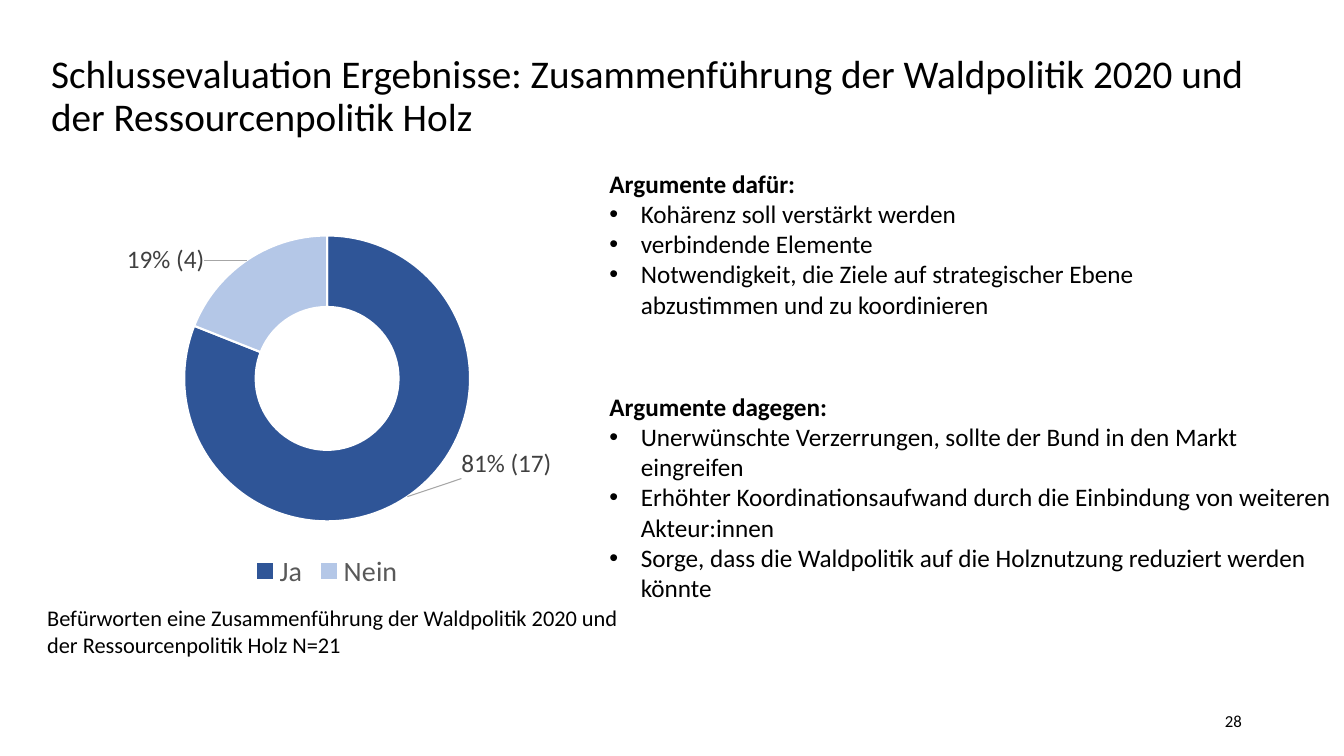
from lxml import etree
from pptx import Presentation
from pptx.chart.data import CategoryChartData
from pptx.dml.color import RGBColor
from pptx.enum.chart import XL_CHART_TYPE, XL_LEGEND_POSITION
from pptx.enum.text import MSO_ANCHOR, PP_ALIGN
from pptx.oxml import parse_xml
from pptx.oxml.ns import nsdecls, qn
from pptx.util import Cm, Pt

DOUGHNUT = XL_CHART_TYPE.DOUGHNUT
LEGEND_BOTTOM = XL_LEGEND_POSITION.BOTTOM
TOP, MIDDLE = MSO_ANCHOR.TOP, MSO_ANCHOR.MIDDLE
LEFT, RIGHT = PP_ALIGN.LEFT, PP_ALIGN.RIGHT

FONT = "Calibri"
BLACK = RGBColor(0x00, 0x00, 0x00)
WHITE = RGBColor(0xFF, 0xFF, 0xFF)
DARK_BLUE = RGBColor(0x2F, 0x55, 0x97)
LIGHT_BLUE = RGBColor(0xB4, 0xC7, 0xE7)
LABEL_GREY = RGBColor(0x40, 0x40, 0x40)
LEGEND_GREY = RGBColor(0x59, 0x59, 0x59)
LEADER_GREY = RGBColor(0xA6, 0xA6, 0xA6)
HANGING = Cm(0.79)

# name, share, colour, label, label shift as a fraction of the chart
ANSWERS = [
    ("Ja", 0.81, DARK_BLUE, "81% (17)", (0.2, -0.01)),
    ("Nein", 0.19, LIGHT_BLUE, "19% (4)", (-0.17, -0.08)),
]
PROS = [
    "Kohärenz soll verstärkt werden",
    "verbindende Elemente",
    "Notwendigkeit, die Ziele auf strategischer Ebene abzustimmen und zu koordinieren",
]
CONS = [
    "Unerwünschte Verzerrungen, sollte der Bund in den Markt eingreifen",
    "Erhöhter Koordinationsaufwand durch die Einbindung von weiteren Akteur:innen",
    "Sorge, dass die Waldpolitik auf die Holznutzung reduziert werden könnte",
]


def set_font(font, size, color=BLACK, bold=False):
    font.name = FONT
    font.size = Pt(size)
    font.bold = bold
    font.color.rgb = color


def add_text(p, text, size=18, color=BLACK, bold=False, align=LEFT, spacing=None, bullet=False):
    p.alignment = align
    if spacing:
        p.line_spacing = spacing
    if bullet:
        pPr = p._p.get_or_add_pPr()
        pPr.set("marL", str(HANGING))
        pPr.set("indent", str(-HANGING))
        etree.SubElement(pPr, qn("a:buFont")).set("typeface", "Arial")
        etree.SubElement(pPr, qn("a:buChar")).set("char", "•")
    r = p.add_run()
    r.text = text
    set_font(r.font, size, color, bold)


def add_box(slide, box, anchor=TOP):
    tf = slide.shapes.add_textbox(*map(Cm, box)).text_frame
    tf.word_wrap = True
    tf.vertical_anchor = anchor
    return tf


def add_line_of_text(slide, box, text, anchor=TOP, **fmt):
    add_text(add_box(slide, box, anchor).paragraphs[0], text, **fmt)


def add_arguments(slide, box, heading, arguments):
    tf = add_box(slide, box)
    add_text(tf.paragraphs[0], heading, bold=True)
    for argument in arguments:
        add_text(tf.add_paragraph(), argument, bullet=True)


def manual_layout(**values):
    parts = "".join(f'<c:{name} val="{value}"/>' for name, value in values.items())
    return parse_xml(f'<c:layout {nsdecls("c")}><c:manualLayout>{parts}</c:manualLayout></c:layout>')


def add_leader_lines(dLbls):
    for name in ("c:showLeaderLines", "c:leaderLines"):
        for old in dLbls.findall(qn(name)):
            dLbls.remove(old)
    etree.SubElement(dLbls, qn("c:showLeaderLines")).set("val", "1")
    dLbls.append(parse_xml(
        f'<c:leaderLines {nsdecls("c", "a")}><c:spPr><a:ln w="9525"><a:solidFill>'
        f'<a:srgbClr val="{LEADER_GREY}"/></a:solidFill></a:ln></c:spPr></c:leaderLines>'))


def add_doughnut(slide, box):
    data = CategoryChartData(number_format="0%")
    data.categories = [answer[0] for answer in ANSWERS]
    data.add_series("Series 1", [answer[1] for answer in ANSWERS])
    chart = slide.shapes.add_chart(DOUGHNUT, *map(Cm, box), data).chart
    chart.has_title = False
    set_font(chart.font, 10)

    # Legend
    chart.has_legend = True
    chart.legend.position = LEGEND_BOTTOM
    chart.legend.include_in_layout = False
    set_font(chart.legend.font, 20, LEGEND_GREY)

    # Ring position
    plot_area = chart._chartSpace.chart.plotArea
    for old in plot_area.findall(qn("c:layout")):
        plot_area.remove(old)
    plot_area.insert(0, manual_layout(layoutTarget="inner", xMode="edge", yMode="edge",
                                      x=0.26, y=0.05, w=0.48, h=0.76))

    # Segments and labels
    plot = chart.plots[0]
    plot.vary_by_categories = True
    series = plot.series[0]
    labels = series.data_labels
    labels.show_value = True
    labels.number_format = "0%"
    labels.number_format_is_linked = False
    set_font(labels.font, 18, LABEL_GREY)
    for i, (_, _, color, label, (dx, dy)) in enumerate(ANSWERS):
        point = series.points[i]
        point.format.fill.solid()
        point.format.fill.fore_color.rgb = color
        point.format.line.color.rgb = WHITE
        point.format.line.width = Pt(1.5)
        tf = point.data_label.text_frame
        add_text(tf.paragraphs[0], label, color=LABEL_GREY)
    for dLbl, answer in zip(labels._element.findall(qn("c:dLbl")), ANSWERS):
        dx, dy = answer[4]
        dLbl.find(qn("c:idx")).addnext(manual_layout(x=dx, y=dy))
    add_leader_lines(labels._element)


def build_slide(prs):
    s = prs.slides.add_slide(prs.slide_layouts[6])
    # Title and slide number
    add_line_of_text(
        s, (1.04, 0.61, 31.24, 3.68),
        "Schlussevaluation Ergebnisse: Zusammenführung der Waldpolitik 2020 und der Ressourcenpolitik Holz",
        anchor=MIDDLE, size=28, spacing=0.9)
    add_line_of_text(s, (23.93, 17.65, 7.62, 1.02), "28", anchor=MIDDLE, size=12, align=RIGHT)
    # Survey result
    add_doughnut(s, (0.74, 5.44, 15.01, 9.53))
    add_line_of_text(
        s, (0.94, 15.11, 15.01, 1.63),
        "Befürworten eine Zusammenführung der Waldpolitik 2020 und der Ressourcenpolitik Holz N=21",
        size=16)
    # Arguments
    add_arguments(s, (15.11, 4.11, 17.07, 4.11), "Argumente dafür:", PROS)
    add_arguments(s, (15.11, 9.73, 18.75, 5.64), "Argumente dagegen:", CONS)


def main():
    prs = Presentation()
    prs.slide_width = Cm(33.87)
    prs.slide_height = Cm(19.05)
    build_slide(prs)
    prs.save("out.pptx")


if __name__ == "__main__":
    main()
